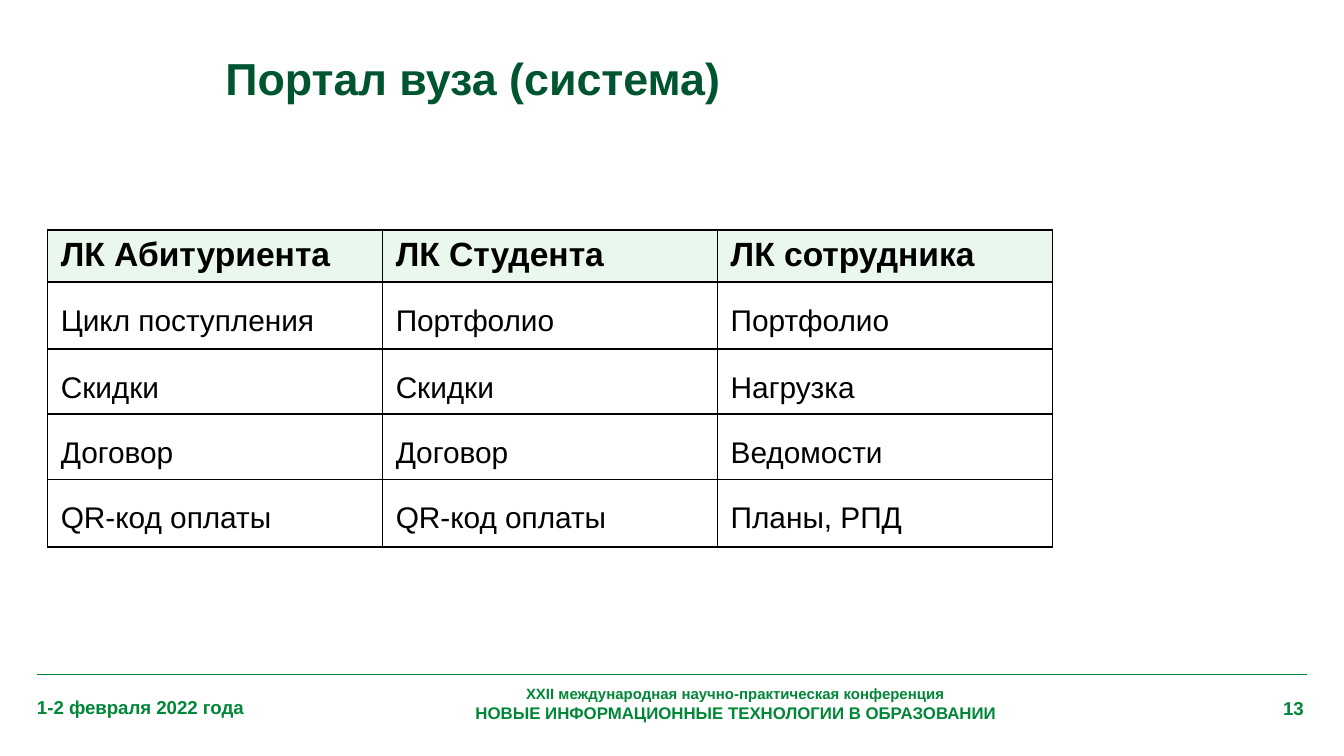
import pptx
import pptx.dml.color
import pptx.enum.shapes
import pptx.enum.text
import pptx.oxml
import pptx.oxml.ns
import pptx.util
from pptx.util import Cm

COLORS = {"green": "008637", "title": "005531", "header": "E9F7ED", "black": "000000"}
ALIGN = pptx.enum.text.PP_ALIGN
ANCHOR = pptx.enum.text.MSO_ANCHOR


def add_span(para, text, size, color, bold=True):
    span = para.add_run()
    span.text = text
    span.font.name = "Arial"
    span.font.size = pptx.util.Pt(size)
    span.font.bold = bold
    span.font.color.rgb = pptx.dml.color.RGBColor.from_string(COLORS[color])


def set_frame(frame, side, anchor):
    frame.word_wrap = True
    frame.margin_left = frame.margin_right = Cm(side)
    frame.margin_top = frame.margin_bottom = 0
    frame.vertical_anchor = anchor


deck = pptx.Presentation()
deck.slide_width, deck.slide_height = Cm(25.4), Cm(14.29)
page = deck.slides.add_slide(deck.slide_layouts[5])

# Footer rule
rule = page.shapes.add_connector(
    pptx.enum.shapes.MSO_CONNECTOR.STRAIGHT, Cm(0.7), Cm(12.75), Cm(24.7), Cm(12.75))
rule.line.width = pptx.util.Pt(0.75)
rule.line.color.rgb = pptx.dml.color.RGBColor.from_string(COLORS["green"])
rule._element.spPr.append(pptx.oxml.parse_xml(
    f'<a:effectLst {pptx.oxml.ns.nsdecls("a")}/>'))

# Footer texts: date, conference, page number
footers = [
    (0.7, 13.16, 4.8, 0.43, ALIGN.LEFT, [("1-2 февраля 2022 года", 10)]),
    (4.7, 12.95, 18.4, 0.74, ALIGN.CENTER,
     [("XXII международная научно-практическая конференция", 8),
      ("НОВЫЕ ИНФОРМАЦИОННЫЕ ТЕХНОЛОГИИ В ОБРАЗОВАНИИ", 9)]),
    (22.5, 13.18, 2.14, 0.43, ALIGN.RIGHT, [("13", 10)]),
]
for left, top, width, height, align, lines in footers:
    box = page.shapes.add_textbox(Cm(left), Cm(top), Cm(width), Cm(height))
    set_frame(box.text_frame, 0, ANCHOR.TOP)
    para = box.text_frame.paragraphs[0]
    para.alignment = align
    for index, (text, size) in enumerate(lines):
        if index:
            para.add_line_break()
        add_span(para, text, size, "green")

# Title
title = page.shapes.title
title.left, title.top, title.width, title.height = Cm(4.1), Cm(0.95), Cm(20), Cm(1.02)
set_frame(title.text_frame, 0.16, ANCHOR.MIDDLE)
para = title.text_frame.paragraphs[0]
para.alignment = ALIGN.LEFT
add_span(para, "Портал вуза (система)", 24, "title")

# Table of personal accounts
rows = [
    ("ЛК Абитуриента", "ЛК Студента", "ЛК сотрудника"),
    ("Цикл поступления", "Портфолио", "Портфолио"),
    ("Скидки", "Скидки", "Нагрузка"),
    ("Договор", "Договор", "Ведомости"),
    ("QR-код оплаты", "QR-код оплаты", "Планы, РПД"),
]
heights = [0.97, 1.26, 1.2, 1.2, 1.27]
table = page.shapes.add_table(
    len(rows), 3, Cm(0.9), Cm(4.35), Cm(18.99), Cm(sum(heights))).table
table.first_row = table.horz_banding = False
for column in table.columns:
    column.width = Cm(6.33)
for row_index, texts in enumerate(rows):
    table.rows[row_index].height = Cm(heights[row_index])
    header = row_index == 0
    for column_index, text in enumerate(texts):
        cell = table.cell(row_index, column_index)
        cell.margin_left = cell.margin_right = Cm(0.25)
        cell.margin_top = cell.margin_bottom = Cm(0.11)
        para = cell.text_frame.paragraphs[0]
        if not header:
            para.line_spacing = 1.5
        add_span(para, text, 18 if header else 16, "black", header)
        # Borders come before the fill in the cell properties
        properties = cell._tc.get_or_add_tcPr()
        for side in ("lnL", "lnR", "lnT", "lnB"):
            properties.append(pptx.oxml.parse_xml(
                f'<a:{side} {pptx.oxml.ns.nsdecls("a")} w="12700"><a:solidFill>'
                f'<a:srgbClr val="{COLORS["black"]}"/></a:solidFill></a:{side}>'))
        if header:
            cell.fill.solid()
            cell.fill.fore_color.rgb = pptx.dml.color.RGBColor.from_string(COLORS["header"])
        else:
            cell.fill.background()

deck.save("out.pptx")
